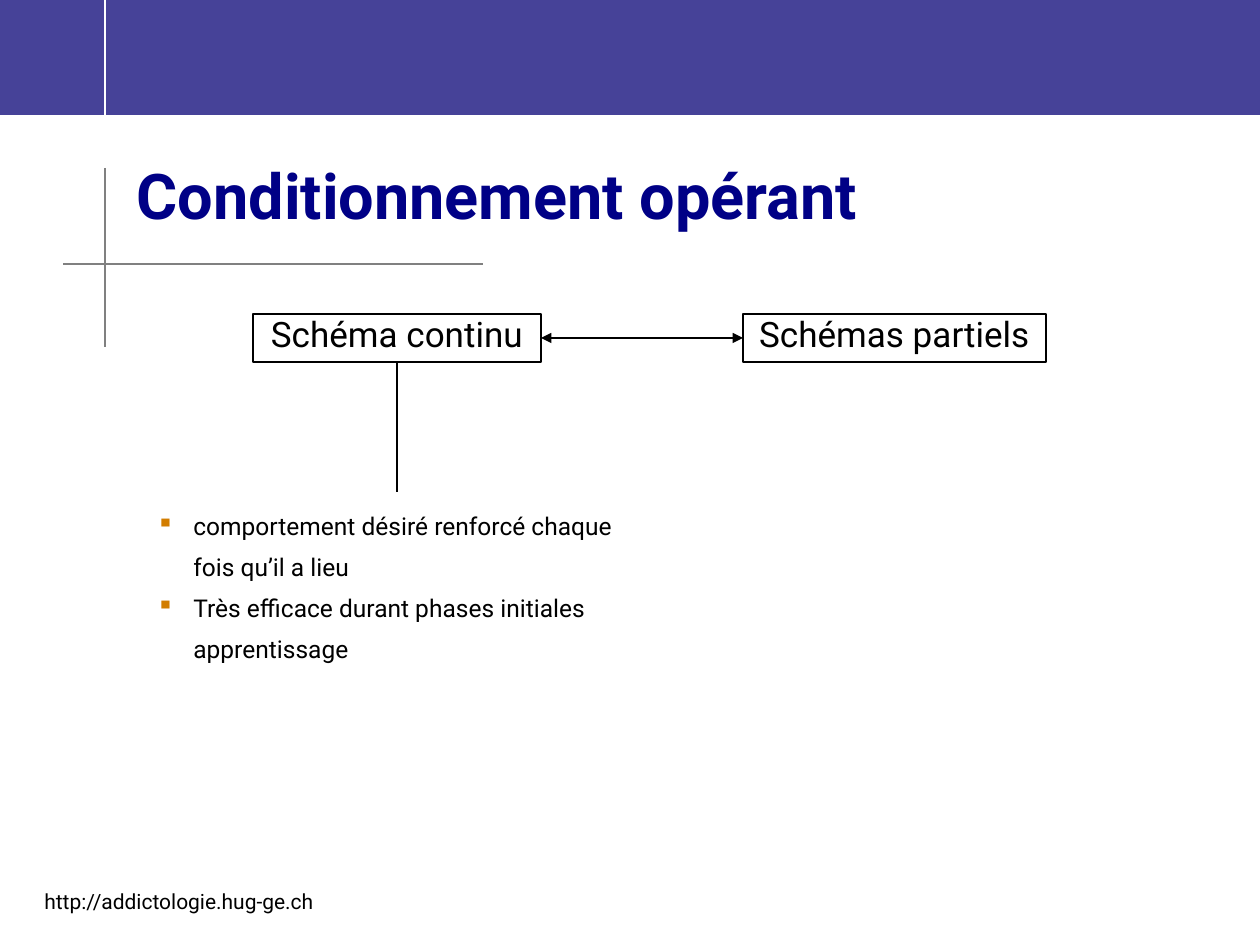
"""Build the slide on operant conditioning and its reinforcement schedules."""
from lxml.etree import SubElement
from pptx import Presentation
from pptx.dml.color import RGBColor
from pptx.enum.shapes import MSO_CONNECTOR, MSO_SHAPE
from pptx.enum.text import MSO_ANCHOR, PP_ALIGN
from pptx.oxml.ns import qn
from pptx.util import Pt

SCALE = 914400 / 126


def emu(*lengths):
    return [round(length * SCALE) for length in lengths]


def style(para, text, size, color, spacing=1.0, bold=False):
    para.text = text
    para.line_spacing = spacing
    para.font.name = "Roboto"
    para.font.size = Pt(size)
    para.font.bold = bold
    para.font.color.rgb = RGBColor.from_string(color)


deck = Presentation()
deck.slide_width, deck.slide_height = emu(1260, 945)
page = deck.slides.add_slide(deck.slide_layouts[6])

band = page.shapes.add_shape(MSO_SHAPE.RECTANGLE, *emu(0, 0, 1260, 115))
band.shadow.inherit = False
band.fill.solid()
band.fill.fore_color.rgb = RGBColor.from_string("464298")
band.line.fill.background()

for start, end, color, arrows in [
    ((105, 115), (105, 0), "FFFFFF", ()),
    ((105, 168), (105, 347), "808080", ()),
    ((63, 264), (483, 264), "808080", ()),
    ((397, 362), (397, 492), "000000", ()),
    ((541, 338), (743, 338), "000000", ("a:headEnd", "a:tailEnd")),
]:
    line = page.shapes.add_connector(MSO_CONNECTOR.STRAIGHT, *emu(*start, *end))
    line.line.color.rgb = RGBColor.from_string(color)
    line.line.width = Pt(0.75)
    for arrow in arrows:
        SubElement(line.line._get_or_add_ln(), qn(arrow), type="triangle")
    SubElement(line._element.spPr, qn("a:effectLst"))

footer = page.shapes.add_textbox(*emu(32, 891, 955, 28)).text_frame
footer.word_wrap = True
style(footer.paragraphs[0], "http://addictologie.hug-ge.ch", 12, "000000", 0.6)

title = page.shapes.add_textbox(*emu(124, 150, 762, 88)).text_frame
title.word_wrap = False
title.vertical_anchor = MSO_ANCHOR.MIDDLE
style(title.paragraphs[0], "Conditionnement opérant", 36, "000086", bold=True)

for left, width, label in [(253, 288, "Schéma continu"), (743, 303, "Schémas partiels")]:
    box = page.shapes.add_shape(MSO_SHAPE.RECTANGLE, *emu(left, 314, width, 48))
    box.shadow.inherit = False
    box.fill.background()
    box.line.color.rgb = RGBColor.from_string("000000")
    box.line.width = Pt(0.75)
    box.text_frame.word_wrap = False
    box.text_frame.vertical_anchor = MSO_ANCHOR.TOP
    para = box.text_frame.paragraphs[0]
    style(para, label, 20, "000000", 0.8)
    para.alignment = PP_ALIGN.CENTER

points = page.shapes.add_textbox(*emu(144, 493, 507, 178)).text_frame
points.word_wrap = True
indent = emu(37)[0]
for index, text in enumerate([
    "comportement désiré renforcé chaque fois qu’il a lieu",
    "Très efficace durant phases initiales apprentissage",
]):
    para = points.add_paragraph() if index else points.paragraphs[0]
    properties = para._p.get_or_add_pPr()
    properties.set("marL", str(indent))
    properties.set("indent", str(-indent))
    bullet_color = SubElement(properties, qn("a:buClr"))
    SubElement(bullet_color, qn("a:srgbClr"), val="D27D00")
    SubElement(properties, qn("a:buChar"), char="▪")
    style(para, text, 14, "000000", 1.4)

deck.save("out.pptx")
